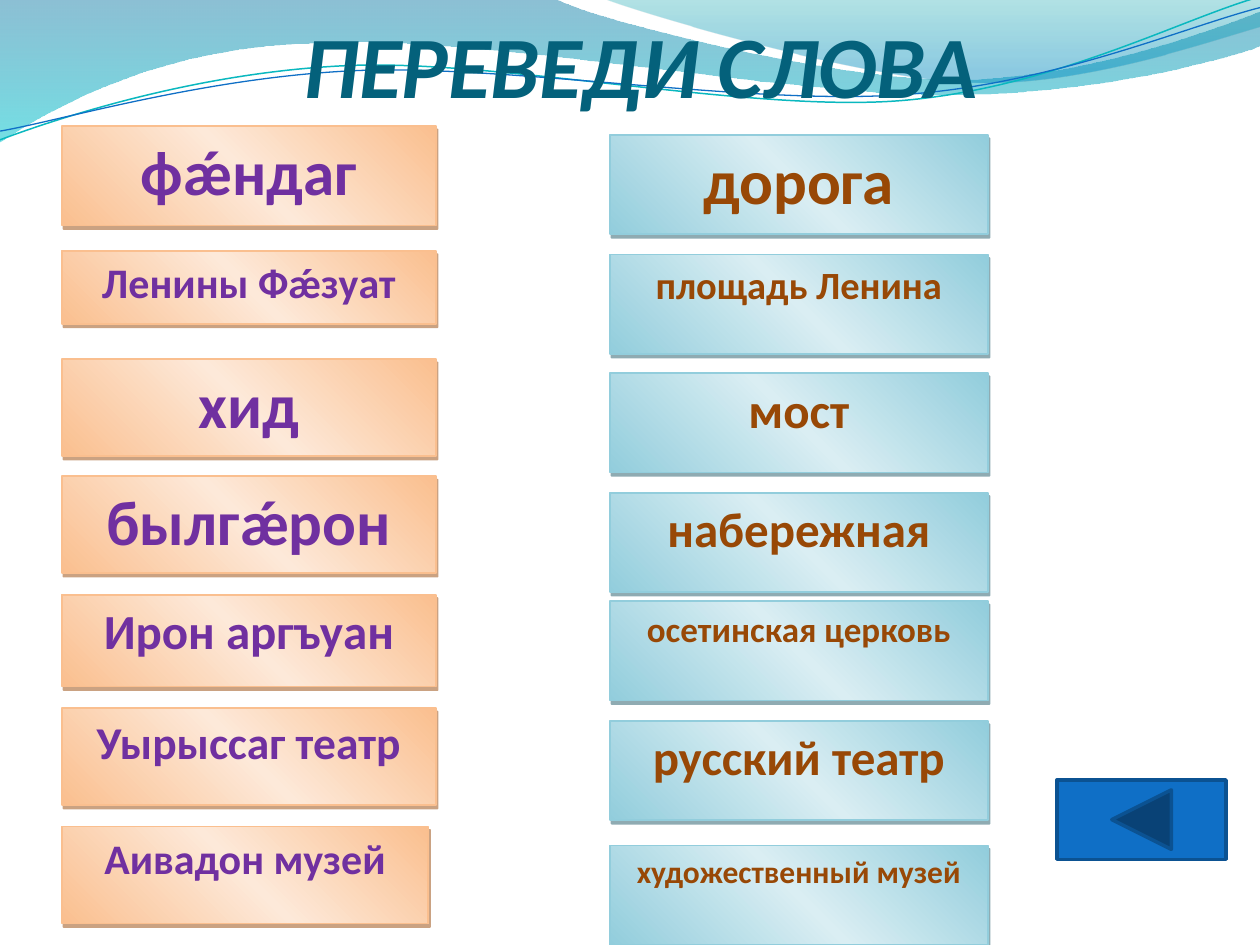
from math import cos, radians, sin
from lxml.etree import SubElement
from pptx import Presentation
from pptx.dml.color import RGBColor
from pptx.enum.shapes import MSO_SHAPE
from pptx.enum.text import MSO_ANCHOR, PP_ALIGN
from pptx.oxml.ns import qn
from pptx.util import Inches, Pt

INK = {
    "title": "04617B", "violet": "7030A0", "brown": "984806",
    "peach": "FABF8F", "cream": "FDE9D9", "rust": "974706",
    "aqua": "92CDDC", "ice": "DAEEF3", "pine": "205867",
    "sea": "0074A1", "cyan": "00C6CF", "teal": "00A1A9", "sky": "008BBF",
    "mint": "0AB8BF", "blue": "0F6FC6", "navy": "0B5292",
}

deck = Presentation()
deck.slide_width, deck.slide_height = Inches(10), Inches(7.5)
slide = deck.slides.add_slide(deck.slide_layouts[6])
shapes = slide.shapes
cell = deck.slide_width // 100  # grid of 100 columns by 75 rows


def wash(shape, stops, angle):
    """Fill with a gradient; stops are (percent, ink, opacity), angle is counter-clockwise."""
    shape.fill.gradient()
    shape.fill.gradient_angle = angle
    ramp = shape.element.spPr.find(".//" + qn("a:gsLst"))
    for old in list(ramp):
        ramp.remove(old)
    for spot, ink, alpha in stops:
        stop = SubElement(ramp, qn("a:gs"), pos=str(spot * 1000))
        tint = SubElement(stop, qn("a:srgbClr"), val=INK[ink])
        if alpha < 100:
            SubElement(tint, qn("a:alpha"), val=str(alpha * 1000))


def write(frame, text, size, ink):
    frame.word_wrap = True
    para = frame.paragraphs[0]
    para.alignment = PP_ALIGN.CENTER
    run = para.add_run()
    run.text = text
    run.font.name, run.font.size, run.font.bold = "Calibri", Pt(size), True
    run.font.color.rgb = RGBColor.from_string(INK[ink])
    return para, run


# Waves in cells: a pair is a corner, six numbers are a Bezier curve.
# A pen is ink, width and the middle row that the line turns about.
waves = [
    ([(0, 0), (44, -0.1), (47.6, 1.7, 66.4, 6.3, 75.8, 6.3),
      (85.3, 6.3, 95.8, 2.6, 100, 0.9), (100.1, 3.6),
      (98.3, 4.4, 87, 7.6, 74.6, 7.5), (62.2, 7.5, 38.2, 2.8, 25.7, 3.4),
      (12.9, 3.6, 4.6, 8.3, -0.1, 11.3), (0, 0)],
     [(0, "sea", 45), (100, "cyan", 55)], None),
    ([(47.9, -0.1), (50.9, 1.1, 68.2, 6.2, 76.9, 6.5),
      (85.6, 6.9, 96.1, 3.2, 100, 2.1), (100, 0), (47.9, -0.1)],
     [(0, "teal", 30), (80, "sky", 45)], None),
    ([(0, 11.1), (4.8, 9.3, 15.8, 5.7, 27.7, 5.2),
      (39.5, 4.7, 59.3, 8.9, 71.3, 8), (83.3, 7.1, 93.8, 1.5, 99.8, -0.2)],
     None, ("mint", 0.85, 5.75)),
    ([(0, 10.4), (4.7, 9.6, 16.4, 6.1, 28.3, 5.6),
      (40.3, 5.1, 59.7, 8.4, 71.7, 7.5), (83.6, 6.7, 94.1, 2.1, 100, 0.6)],
     None, ("blue", 0.75, 5.9)),
]
tilt = 2.7
turn, lift = cos(radians(tilt)), sin(radians(tilt))
for parts, stops, pen in waves:
    dots = [part[i:i + 2] for part in parts for i in range(0, len(part), 2)]
    if pen:
        mid = pen[2]
        dots = [(49.9 + (x - 49.9) * turn - (y - mid) * lift,
                 mid + (x - 49.9) * lift + (y - mid) * turn) for x, y in dots]
    spots = [(round(x * cell), round(y * cell)) for x, y in dots]
    form = shapes.build_freeform(*spots[0])
    form.add_line_segments(spots[1:], close=pen is None)
    wave = form.convert_to_shape()
    wave.shadow.inherit = False
    # Each curve takes its three points out of the straight segments
    legs = iter(wave.element.spPr.findall(".//" + qn("a:lnTo")))
    for part in parts[1:]:
        leg = next(legs)
        if len(part) == 6:
            leg.tag = qn("a:cubicBezTo")
            for extra in (next(legs), next(legs)):
                leg.append(extra[0])
                extra.getparent().remove(extra)
    if pen:
        wave.rotation = 360 - tilt
        wave.fill.background()
        wave.line.color.rgb = RGBColor.from_string(INK[pen[0]])
        wave.line.width = Pt(pen[1])
    else:
        wash(wave, stops, 270)
        wave.line.fill.background()

title = shapes.add_textbox(int(5.9 * cell), 0, 90 * cell, int(9.2 * cell))
frame = title.text_frame
frame.margin_left = frame.margin_right = frame.margin_bottom = 0
frame.vertical_anchor = MSO_ANCHOR.BOTTOM
para, run = write(frame, "ПЕРЕВЕДИ СЛОВА", 50, "title")
run.font.italic = True

# Word cards: top, width, height, size, text
sides = [
    (4.9, "peach", "cream", "rust", "violet", [
        (10, 29.7, 7.9, 36, "фǽндаг"),
        (19.9, 29.7, 5.8, 24, "Ленины Фǽзуат"),
        (28.5, 29.7, 7.7, 36, "хид"),
        (37.8, 29.7, 7.7, 36, "былгǽрон"),
        (47.2, 29.7, 7.3, 28, "Ирон аргъуан"),
        (56.2, 29.7, 7.7, 26, "Уырыссаг театр"),
        (65.6, 29.1, 7.7, 24, "Аивадон музей")]),
    (48.4, "aqua", "ice", "pine", "brown", [
        (top, 30, 7.9, size, text) for top, size, text in [
            (10.7, 36, "дорога"), (20.2, 22, "площадь Ленина"),
            (29.6, 28, "мост"), (39.1, 28, "набережная"),
            (47.7, 20, "осетинская церковь"), (57.2, 28, "русский театр"),
            (67.1, 18, "художественный музей")]]),
]
for left, edge, glow, shade, ink, cards in sides:
    for top, wide, high, size, text in cards:
        box = [int(n * cell) for n in (left, top, wide, high)]
        card = shapes.add_shape(MSO_SHAPE.RECTANGLE, *box)
        wash(card, [(0, edge, 100), (50, glow, 100), (100, edge, 100)], 45)
        card.line.color.rgb = RGBColor.from_string(INK[edge])
        card.line.width = Pt(1)
        card.shadow.inherit = False
        drop = SubElement(card.element.spPr.find(qn("a:effectLst")), qn("a:outerShdw"),
                          blurRad="0", dist=str(Pt(2.2)), dir=str(63 * 60000),
                          algn="ctr", rotWithShape="0")
        tint = SubElement(drop, qn("a:srgbClr"), val=INK[shade])
        SubElement(tint, qn("a:alpha"), val="50000")
        card.text_frame.vertical_anchor = MSO_ANCHOR.TOP
        para, run = write(card.text_frame, text, size, ink)
        para.space_after = Pt(10)

box = [int(n * cell) for n in (83.9, 61.9, 13.4, 6.3)]
back = shapes.add_shape(MSO_SHAPE.ACTION_BUTTON_BACK_OR_PREVIOUS, *box)
back.shadow.inherit = False
back.fill.solid()
back.fill.fore_color.rgb = RGBColor.from_string(INK["blue"])
back.line.color.rgb = RGBColor.from_string(INK["navy"])
back.line.width = Pt(2)

deck.save("out.pptx")
